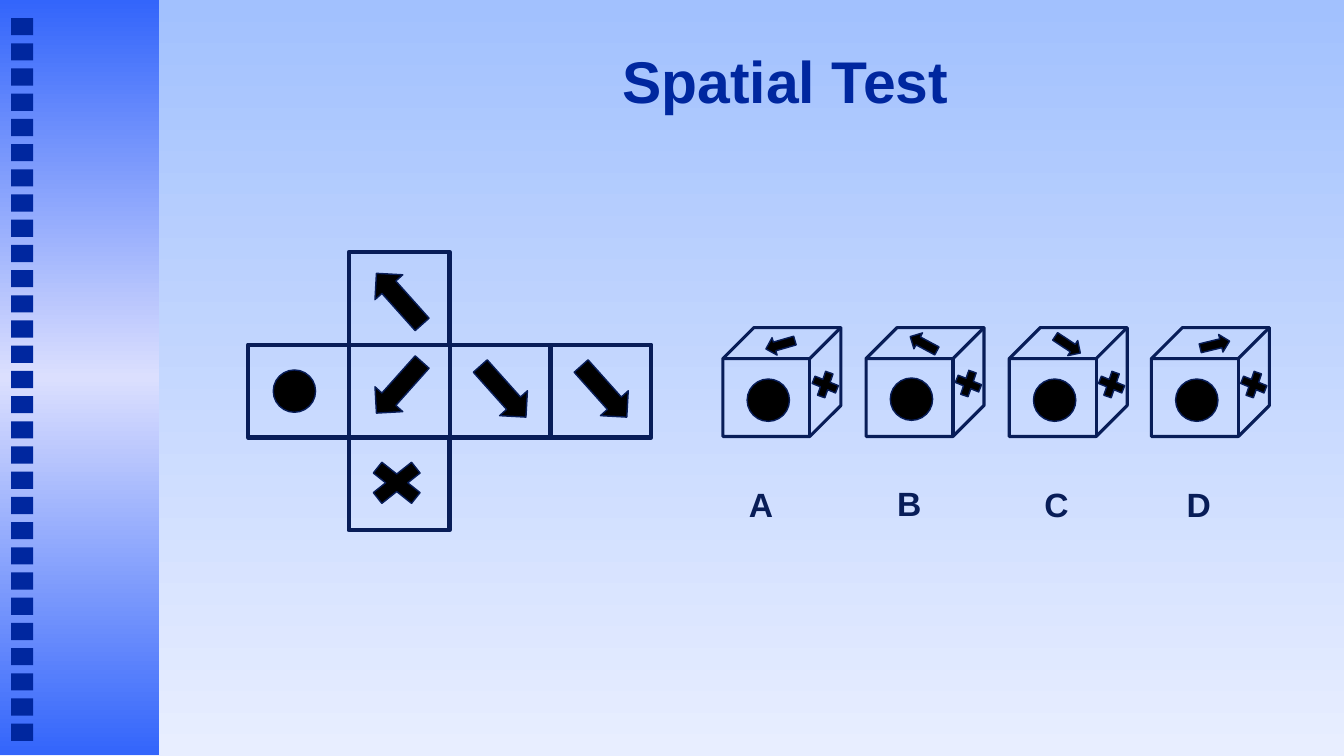
from copy import deepcopy
from pptx import Presentation
from pptx.dml.color import RGBColor
from pptx.enum.shapes import MSO_SHAPE
from pptx.enum.text import MSO_ANCHOR, PP_ALIGN
from pptx.oxml.ns import qn
from pptx.util import Pt

PX = 9144
SKY = RGBColor(0xA2, 0xC1, 0xFE)
PALE = RGBColor(0xE8, 0xEE, 0xFF)
BLUE = RGBColor(0x33, 0x65, 0xFB)
MIST = RGBColor(0xDB, 0xDF, 0xFE)
ROYAL = RGBColor(0x00, 0x27, 0x9F)
NAVY = RGBColor(0x08, 0x1D, 0x58)
BLACK = RGBColor(0, 0, 0)

CELLS = [(0, 1), (1, 2), (1, 0), (2, 1), (3, 1)]
TURNS = [(362, 278, 228.2), (362, 366, 131.8), (465, 370, 48.2), (565, 370, 48.2)]
CUBES = [
    ("A", 717, 325, 42, 163.9, 733),
    ("B", 859, 324, 42, 208.2, 880),
    ("C", 1001, 325, 43, 33.4, 1026),
    ("D", 1142, 325, 48, 346.3, 1167),
]


def add_form(slide, kind, x, y, w, h, fill=None, line=None, turn=0):
    form = slide.shapes.add_shape(kind, x * PX, y * PX, w * PX, h * PX)
    form.shadow.inherit = False
    form.rotation = turn
    if fill is None:
        form.fill.background()
    else:
        form.fill.solid()
        form.fill.fore_color.rgb = fill
    if line is None:
        form.line.fill.background()
    else:
        form.line.color.rgb = NAVY
        form.line.width = Pt(line)
    return form


def add_mark(slide, kind, x, y, w, h, turn=0):
    add_form(slide, kind, x, y, w, h, BLACK, 1, turn)


def blend(fill, first, last):
    fill.gradient()
    fill.gradient_angle = 270
    for stop, color, place in zip(fill.gradient_stops, (first, last), (0, 1)):
        stop.color.rgb = color
        stop.position = place


def add_text(slide, text, x, y, w, h, size, color, align=PP_ALIGN.LEFT):
    box = slide.shapes.add_textbox(x * PX, y * PX, w * PX, h * PX)
    frame = box.text_frame
    frame.word_wrap = True
    frame.vertical_anchor = MSO_ANCHOR.MIDDLE
    frame.text = text
    para = frame.paragraphs[0]
    para.alignment = align
    font = para.runs[0].font
    font.name = "Arial"
    font.size = Pt(size)
    font.bold = True
    font.color.rgb = color


def add_band(slide):
    band = add_form(slide, MSO_SHAPE.RECTANGLE, 0, 0, 158, 749)
    blend(band.fill, BLUE, BLUE)
    stops = band.element.spPr.find(".//" + qn("a:gsLst"))
    stops.insert(1, deepcopy(stops[0]))
    middle = band.fill.gradient_stops[1]
    middle.position = 0.5
    middle.color.rgb = MIST
    for step in range(29):
        add_form(slide, MSO_SHAPE.RECTANGLE, 11, 18 + 25 * step, 22, 17, ROYAL)


def add_net(slide):
    for col, row in CELLS:
        add_form(slide, MSO_SHAPE.RECTANGLE, 246 + 100 * col, 250 + 92 * row, 100, 92, line=3)
    add_mark(slide, MSO_SHAPE.OVAL, 271, 367, 42, 42)
    for x, y, turn in TURNS:
        add_mark(slide, MSO_SHAPE.RIGHT_ARROW, x, y, 68, 37, turn)
    add_mark(slide, MSO_SHAPE.MATH_MULTIPLY, 357, 450, 73, 58)


def add_cube(slide, x, y, shift, turn):
    cube = add_form(slide, MSO_SHAPE.CUBE, x, 325, 117, 108, line=2.25)
    cube.adjustments[0] = 0.285
    add_mark(slide, MSO_SHAPE.MATH_MULTIPLY, x + 84, y + 40, 35, 33, 245.5)
    add_mark(slide, MSO_SHAPE.OVAL, x + 24, y + 51, 42, 42)
    add_mark(slide, MSO_SHAPE.RIGHT_ARROW, x + shift, y + 8, 30, 18, turn)


def main():
    deck = Presentation()
    deck.slide_width = 1333 * PX
    deck.slide_height = 750 * PX
    slide = deck.slides.add_slide(deck.slide_layouts[6])
    blend(slide.background.fill, SKY, PALE)
    add_band(slide)
    add_text(slide, "Spatial Test", 508, 42, 542, 75, 42, ROYAL, PP_ALIGN.CENTER)
    add_net(slide)
    for name, x, y, shift, turn, left in CUBES:
        add_cube(slide, x, y, shift, turn)
        add_text(slide, name, left, y + 150, 49, 50, 24, NAVY)
    deck.save("out.pptx")


if __name__ == "__main__":
    main()
